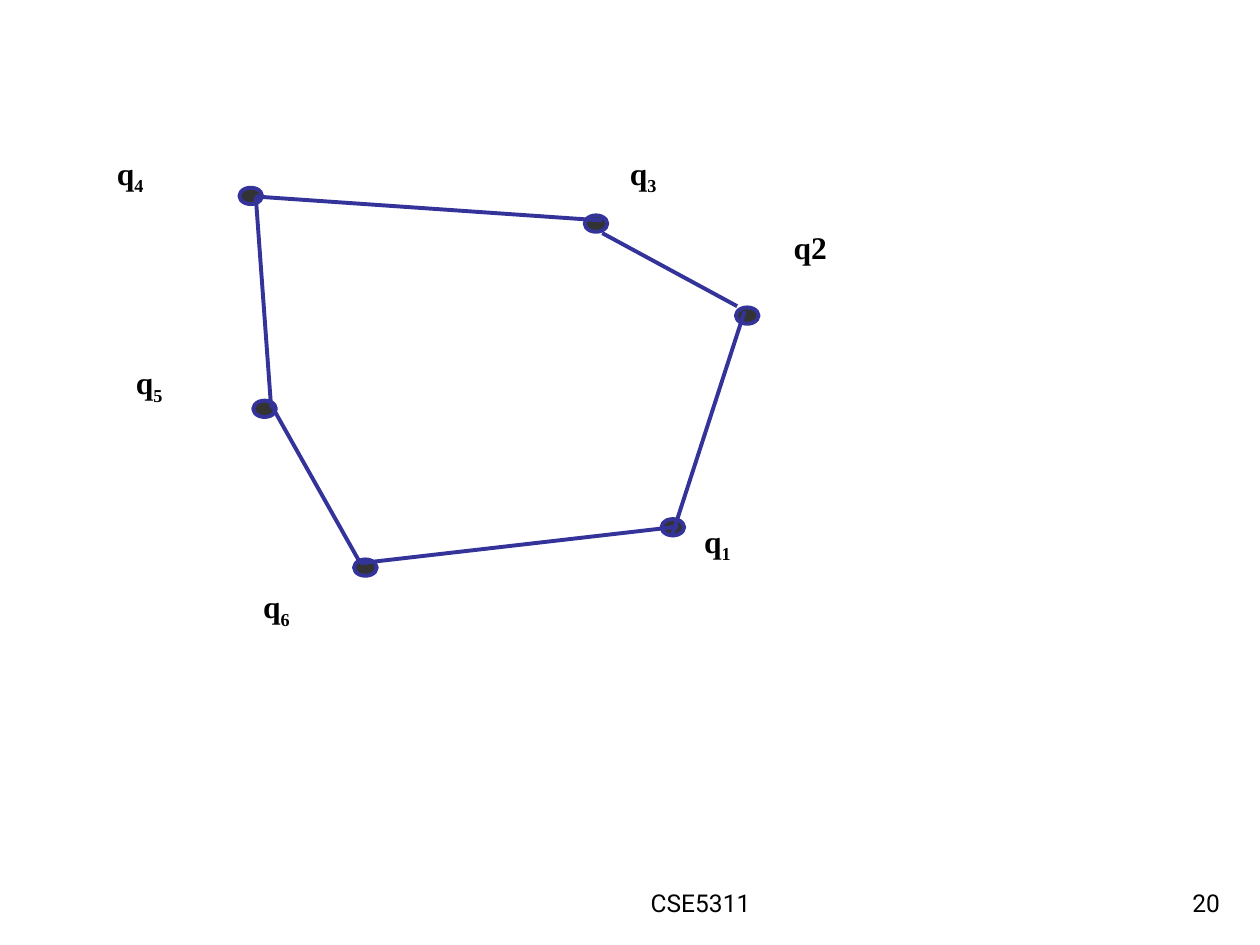
from lxml import etree
from pptx import Presentation
from pptx.dml.color import RGBColor
from pptx.enum.shapes import MSO_CONNECTOR, MSO_SHAPE
from pptx.enum.text import MSO_ANCHOR, PP_ALIGN
from pptx.oxml.ns import qn
from pptx.util import Inches, Pt

OVAL, RECTANGLE = MSO_SHAPE.OVAL, MSO_SHAPE.RECTANGLE
STRAIGHT = MSO_CONNECTOR.STRAIGHT
TOP, BOTTOM = MSO_ANCHOR.TOP, MSO_ANCHOR.BOTTOM
LEFT, CENTER, RIGHT = PP_ALIGN.LEFT, PP_ALIGN.CENTER, PP_ALIGN.RIGHT

COLORS = {"text": "000000", "vertex": "333333", "edge": "333399", "paper": "FFFFFF"}


def add_filled(kind, box, fill, outline, weight):
    shape = slide.shapes.add_shape(kind, *map(Inches, box))
    shape.shadow.inherit = False
    shape.fill.solid()
    shape.fill.fore_color.rgb = RGBColor.from_string(COLORS[fill])
    shape.line.color.rgb = RGBColor.from_string(COLORS[outline])
    shape.line.width = Pt(weight)
    return shape


def format_text(shape, anchor, align, font_name, size, bold):
    shape.text_frame.word_wrap = True
    shape.text_frame.vertical_anchor = anchor
    paragraph = shape.text_frame.paragraphs[0]
    paragraph.alignment = align
    paragraph.font.name = font_name
    paragraph.font.size = Pt(size)
    paragraph.font.bold = bold
    paragraph.font.color.rgb = RGBColor.from_string(COLORS["text"])
    return paragraph


prs = Presentation()
prs.slide_width, prs.slide_height = Inches(10), Inches(7.5)
slide = prs.slides.add_slide(prs.slide_layouts[6])

footers = [("CSE5311 ", 4, 3.17, CENTER), ("20", 7.7, 2.08, RIGHT)]
for text, left, width, align in footers:
    footer = slide.shapes.add_textbox(Inches(left), Inches(6.83), Inches(width), Inches(0.5))
    format_text(footer, BOTTOM, align, "Roboto", 14, False).add_run().text = text

vertices = [(1.9, 1.49), (2.01, 3.18), (2.81, 4.44), (5.84, 2.44), (5.25, 4.12), (4.64, 1.71)]
for left, top in vertices:
    add_filled(OVAL, (left, top, 0.18, 0.13), "vertex", "edge", 2.25)

labels = [
    ("q", "1", 5.49, 4.09),
    ("q2", "", 6.2, 1.76),
    ("q", "3", 4.9, 1.17),
    ("q", "4", 0.83, 1.17),
    ("q", "5", 0.98, 2.83),
    ("q", "6", 1.99, 4.61),
]
for name, subscript, left, top in labels:
    label = add_filled(RECTANGLE, (left, top, 0.72, 0.64), "paper", "paper", 0.75)
    paragraph = format_text(label, TOP, LEFT, "Times New Roman", 18, True)
    paragraph.add_run().text = name
    if subscript:
        index = paragraph.add_run()
        index.text = subscript
        index._r.get_or_add_rPr().set("baseline", "-25000")

edges = [
    ((5.33, 4.26), (5.91, 2.47)),
    ((5.85, 2.43), (4.78, 1.85)),
    ((2.03, 1.56), (4.78, 1.75)),
    ((2.03, 1.56), (2.15, 3.21)),
    ((2.15, 3.21), (2.86, 4.47)),
    ((2.86, 4.47), (5.38, 4.18)),
]
for start, end in edges:
    edge = slide.shapes.add_connector(STRAIGHT, *map(Inches, start + end))
    edge.line.color.rgb = RGBColor.from_string(COLORS["edge"])
    edge.line.width = Pt(2.25)
    etree.SubElement(edge._element.spPr, qn("a:effectLst"))

prs.save("out.pptx")
